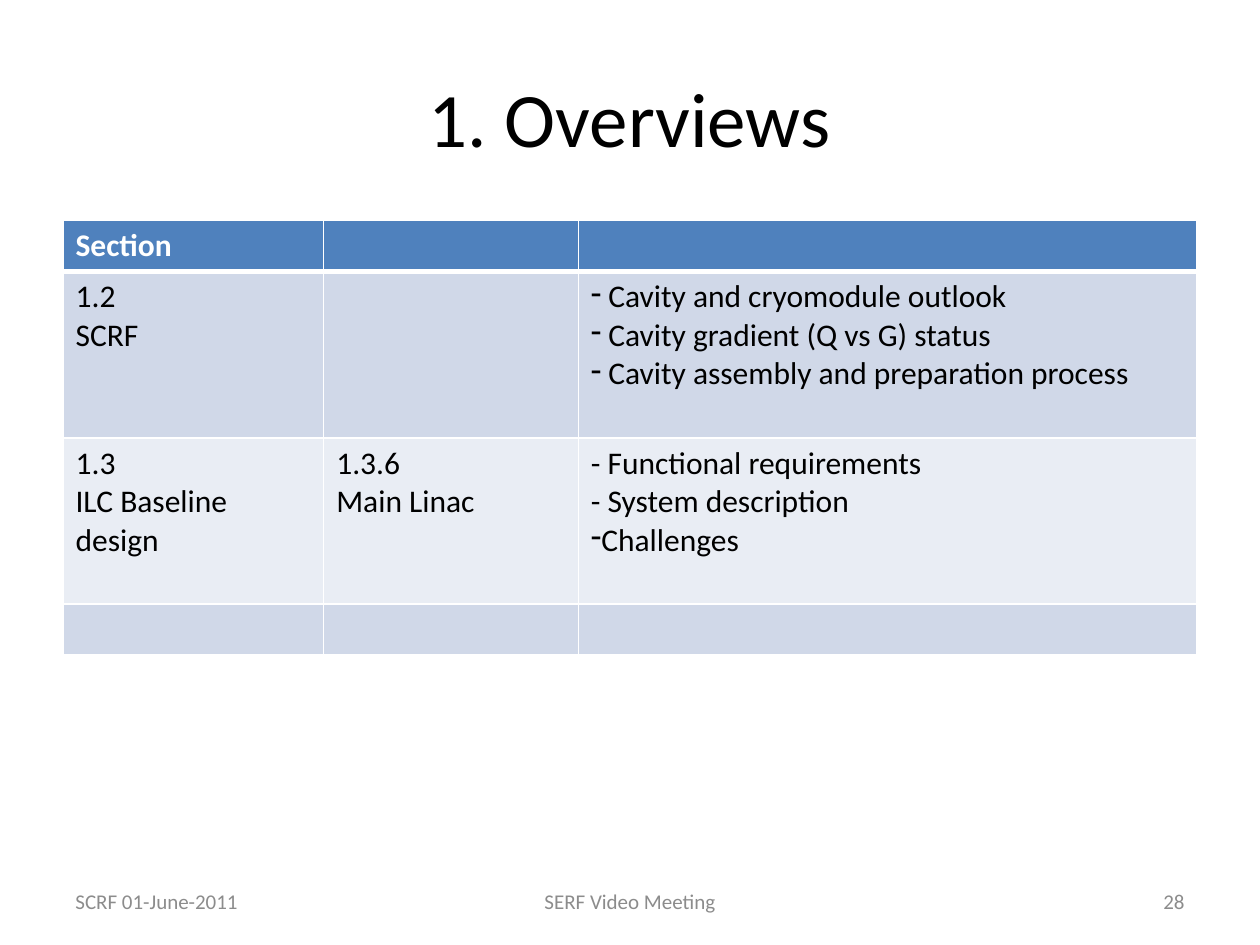
from dataclasses import dataclass

from lxml import etree
from pptx import Presentation
from pptx import util as u
from pptx.dml.color import RGBColor
from pptx.enum import text
from pptx.oxml import ns
from pptx.slide import Slide
from pptx.table import _Cell
from pptx.text.text import TextFrame


@dataclass(frozen=True)
class Theme:
    font: str = "Calibri"
    title_size: float = 44
    table_size: float = 18
    footer_size: float = 12
    ink: str = "000000"
    white: str = "FFFFFF"
    muted: str = "8C8C8C"
    header: str = "4F81BD"
    bands: tuple[str, str] = ("D0D8E8", "E9EDF4")
    rule: float = 1
    header_rule: float = 3


@dataclass(frozen=True)
class Line:
    words: str
    dash: bool = False


@dataclass(frozen=True)
class Row:
    height: float
    cells: tuple[tuple[Line, ...], ...]


@dataclass(frozen=True)
class Footer:
    words: str
    left: float
    width: float
    align: text.PP_ALIGN


THEME = Theme()
MARGIN = 36
CONTENT_WIDTH = 648
COLUMN_WIDTHS = (149, 145.5, 353.5)

SECTIONS = (
    Row(29.2, ((Line("Section"),), (), ())),
    Row(95, (
        (Line("1.2"), Line("SCRF")),
        (),
        (
            Line(" Cavity and cryomodule outlook", dash=True),
            Line(" Cavity gradient (Q vs G) status", dash=True),
            Line(" Cavity assembly and preparation process", dash=True),
        ),
    )),
    Row(95, (
        (Line("1.3"), Line("ILC Baseline design")),
        (Line("1.3.6"), Line("Main Linac")),
        (
            Line("- Functional requirements"),
            Line("- System description"),
            Line("Challenges", dash=True),
        ),
    )),
    Row(29.2, ((), (), ())),
)

FOOTERS = (
    Footer("SCRF 01-June-2011", MARGIN, 168, text.PP_ALIGN.LEFT),
    Footer("SERF Video Meeting", 246, 228, text.PP_ALIGN.CENTER),
    Footer("28", 516, 168, text.PP_ALIGN.RIGHT),
)


def write_text(frame: TextFrame, lines: tuple[Line, ...], *, size: float,
               color: str = THEME.ink, bold: bool = False,
               align: text.PP_ALIGN = text.PP_ALIGN.LEFT) -> None:
    frame.word_wrap = True
    for index, line in enumerate(lines):
        paragraph = frame.add_paragraph() if index else frame.paragraphs[0]
        paragraph.alignment = align
        if line.dash:
            properties = paragraph._p.get_or_add_pPr()
            properties.set("marL", "0")
            properties.set("indent", "0")
            etree.SubElement(properties, ns.qn("a:buFontTx"))
            etree.SubElement(properties, ns.qn("a:buChar"), char="-")
        run = paragraph.add_run()
        run.text = line.words
        run.font.name = THEME.font
        run.font.size = u.Pt(size)
        run.font.bold = bold
        run.font.color.rgb = RGBColor.from_string(color)


def draw_borders(cell: _Cell, widths: dict[str, float]) -> None:
    properties = cell._tc.get_or_add_tcPr()
    for edge, width in widths.items():
        border = etree.SubElement(properties, ns.qn(f"a:ln{edge}"), w=str(u.Pt(width)))
        fill = etree.SubElement(border, ns.qn("a:solidFill"))
        etree.SubElement(fill, ns.qn("a:srgbClr"), val=THEME.white)


def draw_title(slide: Slide, words: str) -> None:
    title = slide.shapes.title
    title.left, title.top = u.Pt(MARGIN), u.Pt(21.6)
    title.width, title.height = u.Pt(CONTENT_WIDTH), u.Pt(90)
    title.text_frame.vertical_anchor = text.MSO_ANCHOR.MIDDLE
    write_text(title.text_frame, (Line(words),), size=THEME.title_size,
               align=text.PP_ALIGN.CENTER)


def draw_sections(slide: Slide, rows: tuple[Row, ...]) -> None:
    table = slide.shapes.add_table(
        len(rows), len(COLUMN_WIDTHS), u.Pt(MARGIN), u.Pt(126),
        u.Pt(CONTENT_WIDTH), u.Pt(sum(row.height for row in rows))).table
    table.first_row = table.horz_banding = False
    for column, width in zip(table.columns, COLUMN_WIDTHS):
        column.width = u.Pt(width)
    for index, row in enumerate(rows):
        is_header = index == 0
        table.rows[index].height = u.Pt(row.height)
        widths = {
            "L": THEME.rule,
            "R": THEME.rule,
            "T": THEME.header_rule if index == 1 else THEME.rule,
            "B": THEME.header_rule if is_header else THEME.rule,
        }
        background = THEME.header if is_header else THEME.bands[(index - 1) % 2]
        for cell, lines in zip(table.rows[index].cells, row.cells):
            draw_borders(cell, widths)
            cell.fill.solid()
            cell.fill.fore_color.rgb = RGBColor.from_string(background)
            write_text(cell.text_frame, lines, size=THEME.table_size,
                       color=THEME.white if is_header else THEME.ink,
                       bold=is_header)


def draw_footer(slide: Slide, footer: Footer) -> None:
    frame = slide.shapes.add_textbox(
        u.Pt(footer.left), u.Pt(500.5), u.Pt(footer.width), u.Pt(28.75)).text_frame
    frame.vertical_anchor = text.MSO_ANCHOR.MIDDLE
    write_text(frame, (Line(footer.words),), size=THEME.footer_size,
               color=THEME.muted, align=footer.align)


def main() -> None:
    deck = Presentation()
    deck.slide_width, deck.slide_height = u.Pt(720), u.Pt(540)
    slide = deck.slides.add_slide(deck.slide_layouts.get_by_name("Title Only"))
    draw_title(slide, "1. Overviews")
    draw_sections(slide, SECTIONS)
    for footer in FOOTERS:
        draw_footer(slide, footer)
    deck.save("out.pptx")


if __name__ == "__main__":
    main()
